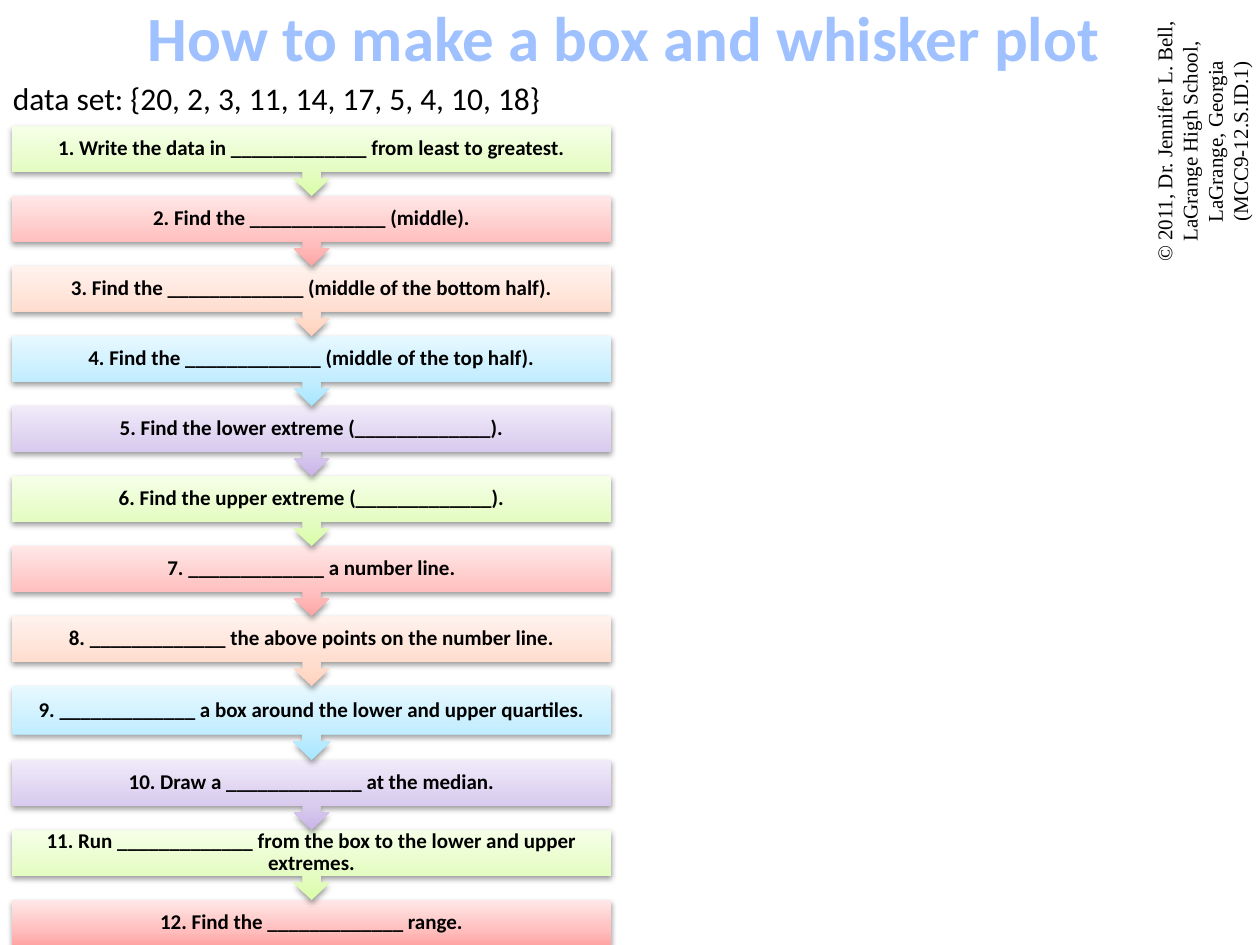
from lxml import etree
from pptx import Presentation
from pptx.dml.color import RGBColor
from pptx.enum.shapes import MSO_SHAPE
from pptx.enum.text import MSO_ANCHOR, MSO_AUTO_SIZE, PP_ALIGN
from pptx.oxml.ns import qn
from pptx.util import Pt

RECTANGLE, CALLOUT = MSO_SHAPE.RECTANGLE, MSO_SHAPE.UP_ARROW_CALLOUT
TOP, MIDDLE = MSO_ANCHOR.TOP, MSO_ANCHOR.MIDDLE
LEFT, CENTER = PP_ALIGN.LEFT, PP_ALIGN.CENTER
GROW, FIXED = MSO_AUTO_SIZE.SHAPE_TO_FIT_TEXT, MSO_AUTO_SIZE.NONE

PX = 914400 / 126
COLORS = {
    "text": "000000", "outline": "467AB8",
    "title edge": "BFD3F9", "title light": "A0C1FF", "title dark": "003D85",
}
STEP_COLORS = {
    "green": ("DAFDA7", "E4FCC2", "F5FFE7"),
    "red": ("FFA6A5", "FFC0BF", "FFE7E7"),
    "orange": ("FFD2BD", "FFDED0", "FFF2ED"),
    "blue": ("A7E6FF", "C1EDFF", "E7F8FF"),
    "purple": ("C9B5E8", "D8CBEE", "F0EAF9"),
}
BLANK = "_" * 13
STEPS = [
    f"Write the data in {BLANK} from least to greatest.",
    f"Find the {BLANK} (middle).",
    f"Find the {BLANK} (middle of the bottom half).",
    f"Find the {BLANK} (middle of the top half).",
    f"Find the lower extreme ({BLANK}).",
    f"Find the upper extreme ({BLANK}).",
    f"{BLANK} a number line.",
    f"{BLANK} the above points on the number line.",
    f"{BLANK} a box around the lower and upper quartiles.",
    f"Draw a {BLANK} at the median.",
    f"Run {BLANK} from the box to the lower and upper extremes.",
    f"Find the {BLANK} range.",
]
STEP_LEFT, STEP_TOP, STEP_WIDTH = 12, 126, 599
BAR_HEIGHT, ARROW_HEIGHT = 45, 25
TALL_STEP, TALL_EXTRA = 9, 4


def emu(px):
    return round(px * PX)


def add_color(parent, color, **changes):
    node = etree.SubElement(parent, qn("a:srgbClr"), val=color)
    for name, value in changes.items():
        etree.SubElement(node, qn(f"a:{name}"), val=str(value))


def gradient_fill(stops, angle):
    """Return a gradient that keeps its direction when its shape is turned."""
    fill = etree.Element(qn("a:gradFill"), rotWithShape="0")
    stop_list = etree.SubElement(fill, qn("a:gsLst"))
    for position, color in stops:
        add_color(etree.SubElement(stop_list, qn("a:gs"), pos=str(position * 1000)), color)
    etree.SubElement(fill, qn("a:lin"), ang=str(angle * 60000), scaled="0")
    return fill


def write(shape, text, size=12, font="Calibri", color="text", bold=False,
          align=CENTER, anchor=TOP, insets=(13, 6), wrap=True, fit=GROW, spacing=None):
    frame = shape.text_frame
    frame.word_wrap, frame.auto_size, frame.vertical_anchor = wrap, fit, anchor
    frame.margin_left = frame.margin_right = emu(insets[0])
    frame.margin_top = frame.margin_bottom = emu(insets[1])
    frame.text = text
    for para in frame.paragraphs:
        para.alignment, para.line_spacing = align, spacing
        for span in para.runs:
            span.font.size, span.font.name, span.font.bold = Pt(size), font, bold
            span.font.color.rgb = RGBColor.from_string(COLORS[color])


class Worksheet:
    """Holds the deck and its current slide."""

    def __init__(self, width, height):
        self.deck = Presentation()
        self.deck.slide_width, self.deck.slide_height = emu(width), emu(height)
        self.page = self.deck.slides.add_slide(self.deck.slide_layouts[5])

    def title(self, text, left, top, width, height):
        box = self.page.shapes.title
        box.left, box.top, box.width, box.height = map(emu, (left, top, width, height))
        write(box, text, size=36, color="title light", bold=True, wrap=False)
        properties = box.text_frame.paragraphs[0].runs[0].font._element
        names = ("title edge", "title light", "title dark", "title light", "title edge")
        stops = zip((0, 9, 50, 79, 100), (COLORS[name] for name in names))
        properties.replace(properties.find(qn("a:solidFill")), gradient_fill(stops, 90))
        outline = etree.Element(qn("a:ln"), w=str(Pt(0.83)))
        add_color(etree.SubElement(outline, qn("a:solidFill")), COLORS["outline"])
        properties.insert(0, outline)

    def text(self, text, left, top, width, height, rotation=0, **style):
        box = self.page.shapes.add_textbox(*map(emu, (left, top, width, height)))
        box.rotation = rotation
        write(box, text, **style)

    def bar(self, kind, colors, left, top, width, height, rotation=0):
        shape = self.page.shapes.add_shape(kind, *map(emu, (left, top, width, height)))
        shape.rotation = rotation
        shape.line.fill.background()
        shape.shadow.inherit = False
        properties = shape._element.spPr
        fill = gradient_fill(zip((0, 35, 100), colors), 270)
        properties.find(qn("a:prstGeom")).addnext(fill)
        shadow = etree.SubElement(
            properties.find(qn("a:effectLst")), qn("a:outerShdw"), blurRad="40000",
            dist="20000", dir=str(90 * 60000), rotWithShape="0")
        add_color(shadow, COLORS["text"], alpha=38000)

    def steps(self, texts):
        """Stack the steps from the bottom up, so each arrow lies over the next bar."""
        palette = list(STEP_COLORS.values())
        for number in range(len(texts), 0, -1):
            top = STEP_TOP + (number - 1) * (BAR_HEIGHT + ARROW_HEIGHT)
            top += TALL_EXTRA if number > TALL_STEP else 0
            height = BAR_HEIGHT + (TALL_EXTRA if number == TALL_STEP else 0)
            colors = palette[(number - 1) % len(palette)]
            if number == len(texts):
                self.bar(RECTANGLE, colors, STEP_LEFT, top, STEP_WIDTH, height)
            else:
                self.bar(CALLOUT, colors, STEP_LEFT, top, STEP_WIDTH,
                         height + ARROW_HEIGHT, rotation=180)
            self.text(f"{number}. {texts[number - 1]}", STEP_LEFT, top, STEP_WIDTH, height,
                      bold=True, anchor=MIDDLE, insets=(12, 12), fit=FIXED, spacing=0.9)


def main():
    sheet = Worksheet(1260, 945)
    sheet.steps(STEPS)
    sheet.title("How to make a box and whisker plot ", 130, -8, 1002, 89)
    sheet.text("data set: {20, 2, 3, 11, 14, 17, 5, 4, 10, 18}", 0, 73, 577, 50,
               size=18, align=LEFT)
    sheet.text("© 2011, Dr. Jennifer L. Bell, LaGrange High School,\n"
               "LaGrange, Georgia\n(MCC9-12.S.ID.1)",
               1061, 84, 284, 115, rotation=270, font="Times New Roman")
    sheet.deck.save("out.pptx")


if __name__ == "__main__":
    main()
